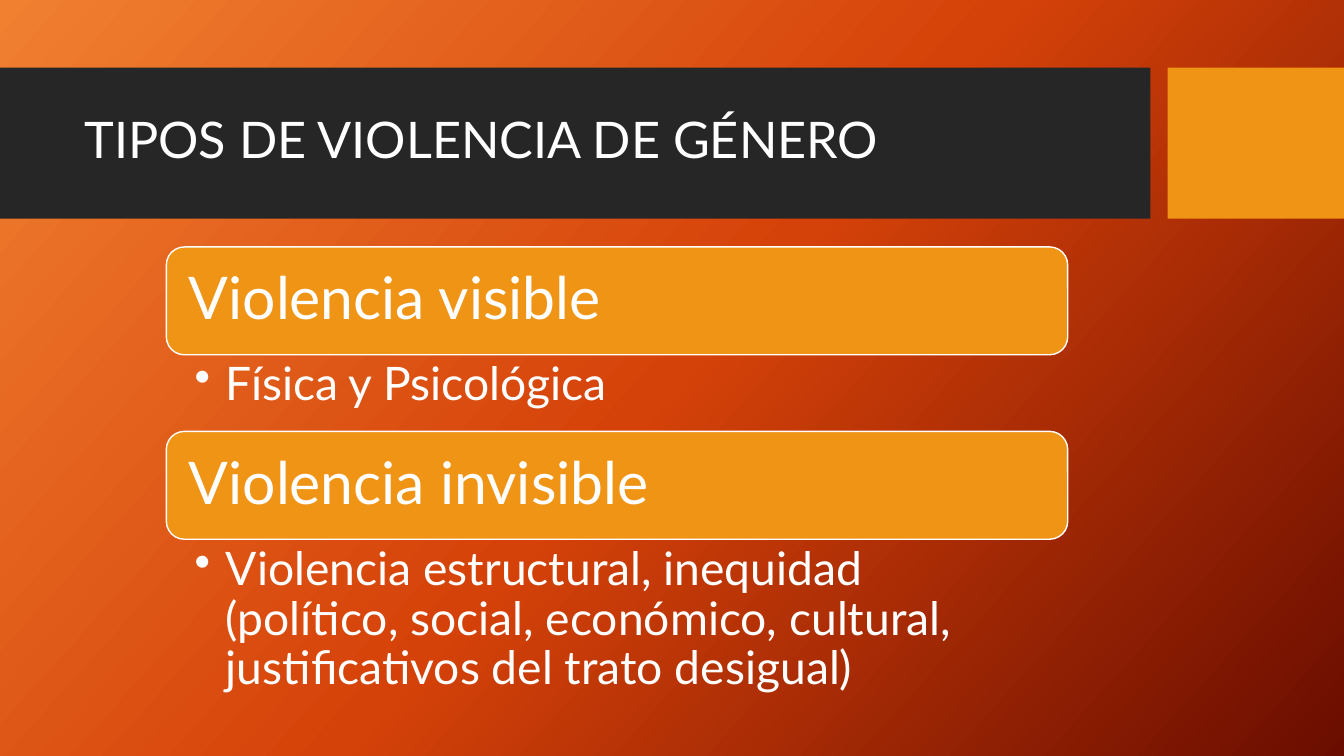
from lxml import etree
from pptx import Presentation
from pptx.dml.color import RGBColor
from pptx.enum.shapes import MSO_SHAPE as Shape
from pptx.enum.text import MSO_ANCHOR as Anchor, PP_ALIGN as Align
from pptx.oxml import parse_xml
from pptx.oxml.ns import nsdecls, qn
from pptx.util import Inches, Pt

# Content
TITLE = "TIPOS DE VIOLENCIA DE GÉNERO"
SECTIONS = [
    ("Violencia visible", "Física y Psicológica", 0.76),
    ("Violencia invisible",
     "Violencia estructural, inequidad (político, social, económico, "
     "cultural, justificativos del trato desigual)", 1.57),
]
FONT = "Lato"
COLORS = {"band": "262626", "accent": "F09415", "text": "FFFFFF"}
GRADIENT = [(0, "F18031"), (50, "D54209"), (100, "6A0D00")]
GRADIENT_ANGLE = 42

# Layout, in inches
BAND_TOP, BAND_HEIGHT = 0.67, 1.5
LIST_LEFT, LIST_TOP, LIST_WIDTH = 1.65, 2.45, 8.94
HEADING_HEIGHT = 1.07
BULLET_INDENT = 0.31


def color(name):
    return RGBColor.from_string(COLORS[name])


def add_block(slide, kind, place, fill, line=None):
    block = slide.shapes.add_shape(kind, *map(Inches, place))
    block.shadow.inherit = False
    block.fill.solid()
    block.fill.fore_color.rgb = color(fill)
    if line:
        block.line.color.rgb = color(line)
        block.line.width = Pt(1)
    else:
        block.line.fill.background()
    return block


def set_text(box, text, size, insets, anchor, bullet=False):
    frame = box.text_frame
    frame.word_wrap = True
    frame.vertical_anchor = anchor
    (frame.margin_left, frame.margin_top,
     frame.margin_right, frame.margin_bottom) = map(Inches, insets)
    frame.text = text
    para = frame.paragraphs[0]
    para.alignment = Align.LEFT
    para.line_spacing = 0.9
    if bullet:
        props = para._p.get_or_add_pPr()
        props.set("marL", str(Inches(BULLET_INDENT)))
        props.set("indent", str(-Inches(BULLET_INDENT)))
        etree.SubElement(props, qn("a:buChar")).set("char", "•")
    span = para.runs[0]
    span.font.name = FONT
    span.font.size = Pt(size)
    span.font.color.rgb = color("text")


def set_background(slide):
    stops = "".join(
        f'<a:gs pos="{pos * 1000}"><a:srgbClr val="{value}"/></a:gs>'
        for pos, value in GRADIENT)
    slide._element.cSld.insert(0, parse_xml(
        f'<p:bg {nsdecls("p", "a")}><p:bgPr><a:gradFill rotWithShape="1">'
        f'<a:gsLst>{stops}</a:gsLst>'
        f'<a:lin ang="{GRADIENT_ANGLE * 60000}" scaled="0"/></a:gradFill>'
        '<a:effectLst/></p:bgPr></p:bg>'))


def main():
    deck = Presentation()
    deck.slide_width, deck.slide_height = Inches(13.33), Inches(7.5)
    slide = deck.slides.add_slide(deck.slide_layouts[6])
    set_background(slide)

    # Title band
    add_block(slide, Shape.RECTANGLE, (0, BAND_TOP, 11.41, BAND_HEIGHT), "band")
    add_block(slide, Shape.RECTANGLE, (11.58, BAND_TOP, 1.75, BAND_HEIGHT), "accent")
    title = slide.shapes.add_textbox(*map(Inches, (0.74, 0.82, 10.51, 1.18)))
    set_text(title, TITLE, 36, (0.1, 0.05, 0.1, 0.05), Anchor.MIDDLE)

    # Headings, each followed by its bullet
    top = LIST_TOP
    for heading, detail, detail_height in SECTIONS:
        block = add_block(slide, Shape.ROUNDED_RECTANGLE,
                          (LIST_LEFT, top, LIST_WIDTH, HEADING_HEIGHT),
                          "accent", "text")
        set_text(block, heading, 42, (0.17, 0.17, 0.17, 0.17), Anchor.MIDDLE)
        top += HEADING_HEIGHT
        box = slide.shapes.add_textbox(
            *map(Inches, (LIST_LEFT, top, LIST_WIDTH, detail_height)))
        set_text(box, detail, 33, (0.28, 0.06, 0.33, 0.06), Anchor.TOP, bullet=True)
        top += detail_height

    deck.save("out.pptx")


if __name__ == "__main__":
    main()
